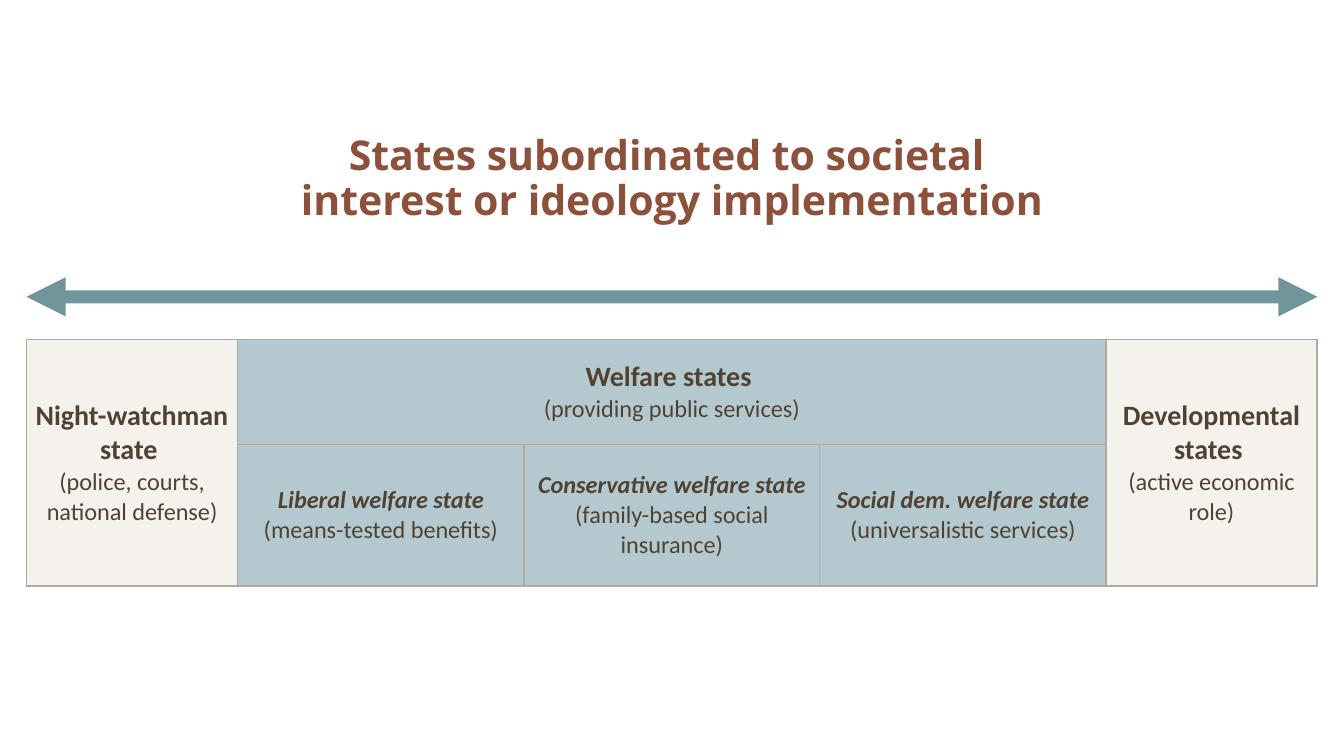
from lxml import etree
from pptx import Presentation
from pptx.dml.color import RGBColor
from pptx.enum.shapes import MSO_CONNECTOR
from pptx.enum.text import MSO_ANCHOR, MSO_AUTO_SIZE, PP_ALIGN
from pptx.oxml.ns import qn
from pptx.util import Cm, Pt

LINE = MSO_CONNECTOR.STRAIGHT
MID = MSO_ANCHOR.MIDDLE
CENTER = PP_ALIGN.CENTER
FIXED = MSO_AUTO_SIZE.NONE

RUST = RGBColor(0x8D, 0x50, 0x3B)
TEAL = RGBColor(0x4D, 0x7C, 0x84)
BROWN = RGBColor(0x50, 0x41, 0x31)
SAND = RGBColor(0xEF, 0xEA, 0xE4)
BLUE = RGBColor(0x6B, 0x95, 0xA1)
EDGE = RGBColor(0xB3, 0xA9, 0x9D)

COLS = [3.99, 5.41, 5.59, 5.41, 3.99]
ROWS = [1.98, 2.62]


def sub(node, tag, **attrs):
    return etree.SubElement(node, qn(tag), attrs)


def fade(node, share):
    """Set the opacity, in percent, of the colour held in a fill."""
    sub(node.find(qn("a:srgbClr")), "a:alpha", val=str(share * 1000))


def write(para, text, size=13, color=BROWN, face="Calibri", bold=False,
          slant=False):
    """Add centred text to a paragraph; a newline becomes a line break."""
    para.alignment = CENTER
    for i, line in enumerate(text.split("\n")):
        if i:
            para.add_line_break()
        if line:
            run = para.add_run()
            run.text = line
            font = run.font
            font.size, font.name = Pt(size), face
            font.bold, font.italic = bold, slant
            font.color.rgb = color


def add_title(slide, x, y, w, h):
    title = slide.shapes.title
    title.left, title.top, title.width, title.height = Cm(x), Cm(y), Cm(w), Cm(h)
    frame = title.text_frame
    frame.word_wrap = True
    frame.auto_size = FIXED
    frame.vertical_anchor = MID
    para = frame.paragraphs[0]
    para.line_spacing = 0.9
    write(para, "States subordinated to societal \ninterest or ideology implementation",
          size=22, color=RUST, face="Open Sans", bold=True)


def add_arrow(slide, x, y, w):
    arrow = slide.shapes.add_connector(LINE, Cm(x), Cm(y), Cm(x + w), Cm(y))
    arrow.line.width = Pt(7)
    arrow.line.color.rgb = TEAL
    props = arrow.line._get_or_add_ln()
    fade(props.find(qn("a:solidFill")), 80)
    for end in ("a:headEnd", "a:tailEnd"):
        sub(props, end, type="triangle")
    sub(arrow._element.spPr, "a:effectLst")


def style(cell, color, share, thin):
    """Give a cell its borders, fill and margins; thin names the fine sides."""
    props = cell._tc.get_or_add_tcPr()
    for side in "LRTB":
        width = Pt(0.5) if side in thin else Pt(1)
        edge = sub(props, "a:ln" + side, w=str(width))
        sub(sub(edge, "a:solidFill"), "a:srgbClr", val=str(EDGE))
    cell.fill.solid()
    cell.fill.fore_color.rgb = color
    fade(props.find(qn("a:solidFill")), share)
    cell.margin_left = cell.margin_right = Cm(0.13)
    cell.margin_top = cell.margin_bottom = Cm(0.13)
    cell.vertical_anchor = MID


def add_grid(slide, x, y, w, h):
    grid = slide.shapes.add_table(2, 5, Cm(x), Cm(y), Cm(w), Cm(h)).table
    grid.first_row = grid.horz_banding = False
    for col, width in zip(grid.columns, COLS):
        col.width = Cm(width)
    for row, height in zip(grid.rows, ROWS):
        row.height = Cm(height)

    # Cell looks: sand at both ends, blue between
    for r in range(2):
        for c in range(5):
            if c in (0, 4):
                style(grid.cell(r, c), SAND, 60, "")
            else:
                style(grid.cell(r, c), BLUE, 50, "T" if r else "B")

    # Outer states, each over both rows
    for c, name, note in (
            (0, "Night-watchman state ", "(police, courts, national defense)"),
            (4, "Developmental states ", "(active economic role)")):
        cell = grid.cell(0, c)
        cell.merge(grid.cell(1, c))
        frame = cell.text_frame
        write(frame.paragraphs[0], name, size=15, bold=True)
        write(frame.add_paragraph(), note)

    # Welfare heading over its three kinds
    head = grid.cell(0, 1)
    head.merge(grid.cell(0, 3))
    para = head.text_frame.paragraphs[0]
    write(para, "Welfare states \n", size=15, bold=True)
    write(para, "(providing public services)")
    kinds = (("Liberal welfare state ", "(means-tested benefits)"),
             ("Conservative welfare state ", "(family-based social insurance)"),
             ("Social dem. welfare state ", "(universalistic services)"))
    for c, (name, note) in enumerate(kinds, 1):
        para = grid.cell(1, c).text_frame.paragraphs[0]
        write(para, name, bold=True, slant=True)
        write(para, note)


def main():
    deck = Presentation()
    deck.slide_width, deck.slide_height = Cm(25.4), Cm(14.29)
    slide = deck.slides.add_slide(deck.slide_layouts[5])
    add_title(slide, 0.3, 2.13, 24.8, 2.54)
    add_arrow(slide, 0.5, 5.61, 24.4)
    add_grid(slide, 0.5, 6.42, sum(COLS), sum(ROWS))
    deck.save("out.pptx")


if __name__ == "__main__":
    main()
